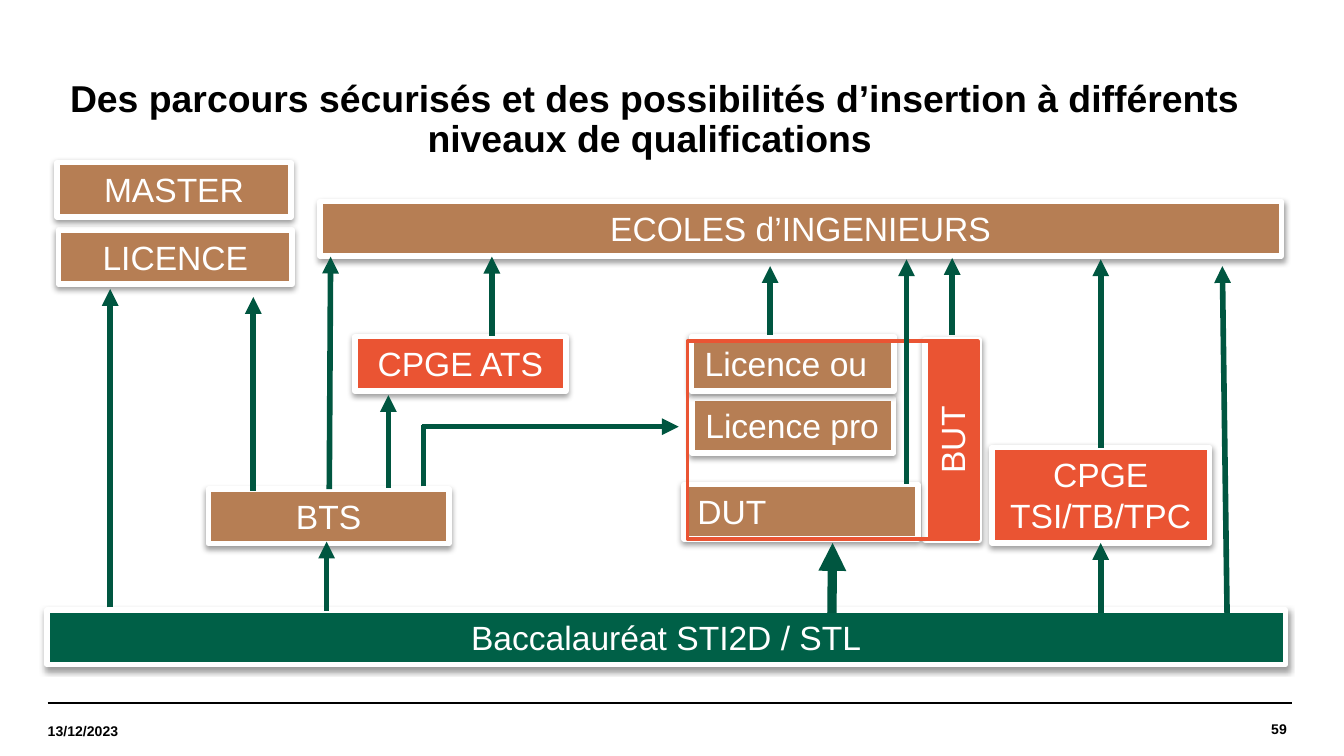
import pptx
import pptx.dml.color
import pptx.enum.shapes
import pptx.enum.text
import pptx.oxml
import pptx.oxml.ns
import pptx.util

PX = 4572
FONT = "Arial"
HUES = {
    "white": "FFFFFF",
    "black": "000000",
    "green": "006047",
    "arrow": "005640",
    "red": "EA5433",
    "brown": "B67E54",
}
ALIGN = pptx.enum.text.PP_ALIGN
ANCHOR = pptx.enum.text.MSO_ANCHOR
RECT = pptx.enum.shapes.MSO_SHAPE.RECTANGLE
STRAIGHT = pptx.enum.shapes.MSO_CONNECTOR.STRAIGHT


def hue(name):
    """Return a named colour."""
    return pptx.dml.color.RGBColor.from_string(HUES[name])


def emu(*sizes):
    """Turn px into EMU."""
    return [pptx.util.Emu(size * PX) for size in sizes]


def write(frame, text, size, color, align, bold=False):
    """Write one paragraph of one run and return it."""
    frame.word_wrap = True
    para = frame.paragraphs[0]
    para.alignment = align
    run = para.add_run()
    run.text = text
    font = run.font
    font.name, font.size, font.bold = FONT, pptx.util.Pt(size), bold
    font.color.rgb = hue(color)
    return para


def add_xml(parent, tag, **attrs):
    """Append a drawing element with its attributes."""
    child = pptx.oxml.parse_xml(f"<a:{tag} {pptx.oxml.ns.nsdecls('a')}/>")
    for key, value in attrs.items():
        child.set(key, value)
    parent.append(child)
    return child


def add_line(slide, ends, color, width, head=False):
    """Draw a straight line, with an arrowhead if asked."""
    line = slide.shapes.add_connector(STRAIGHT, *emu(*ends))
    line.line.color.rgb = hue(color)
    line.line.width = pptx.util.Pt(width)
    if head:
        add_xml(line.line._get_or_add_ln(), "tailEnd", type="triangle")
    add_xml(line._element.spPr, "effectLst")


def add_rect(slide, box, fill, edge, width):
    """Draw a flat rectangle, hollow when it has no fill."""
    rect = slide.shapes.add_shape(RECT, *emu(*box))
    rect.shadow.inherit = False
    if fill:
        rect.fill.solid()
        rect.fill.fore_color.rgb = hue(fill)
    else:
        rect.fill.background()
    rect.line.color.rgb = hue(edge)
    rect.line.width = pptx.util.Pt(width)
    return rect


def add_step(slide, box, text, fill, align=ALIGN.CENTER, turn=0):
    """Draw one study step as a labelled box with a soft shadow."""
    step = add_rect(slide, box, fill, "white", 3)
    effects = step._element.spPr.find(pptx.oxml.ns.qn("a:effectLst"))
    shade = add_xml(effects, "outerShdw", blurRad="40000", dist="20000",
                    dir="5400000", rotWithShape="0")
    tint = add_xml(shade, "srgbClr", val=HUES["black"])
    add_xml(tint, "alpha", val="38000")
    step.rotation = turn
    step.text_frame.vertical_anchor = ANCHOR.TOP
    write(step.text_frame, text, 18, "white", align)


def add_title(slide, box):
    """Place and format the title."""
    title = slide.shapes.title
    title.left, title.top, title.width, title.height = emu(*box)
    frame = title.text_frame
    frame.auto_size = pptx.enum.text.MSO_AUTO_SIZE.NONE
    frame.vertical_anchor = ANCHOR.MIDDLE
    text = ("Des parcours sécurisés et des possibilités d’insertion "
            "à différents niveaux de qualifications ")
    para = write(frame, text, 20, "black", ALIGN.CENTER, True)
    para.line_spacing = 0.9


def add_flow(slide, box):
    """Draw the study paths from the diploma up to the schools."""
    left, top, wide, high = box
    row = 81
    steps = [
        ((0, high - row, wide, row), "Baccalauréat STI2D / STL", "green"),
        ((1198, 372, 298, row), "BUT", "red", ALIGN.CENTER, 270),
        ((1406, 424, 324, 142), "CPGE TSI/TB/TPC", "red"),
        ((240, 486, 358, row), "BTS", "brown"),
        ((960, 351, 300, row), "Licence pro", "brown", ALIGN.LEFT),
        ((948, 479, 348, row), "DUT", "brown", ALIGN.LEFT),
        ((458, 259, 314, row), "CPGE ATS", "red"),
        ((17, 100, 348, row), "LICENCE", "brown"),
        ((15, 0, 348, row), "MASTER", "brown"),
        ((406, 58, 1431, row), "ECOLES d’INGENIEURS", "brown"),
        ((959, 259, 301, row), "Licence ou", "brown", ALIGN.LEFT),
    ]
    for (x, y, w, h), *look in steps:
        add_step(slide, (left + x, top + y, w, h), *look)

    add_rect(slide, (left + 953, top + 266, 432, 294), None, "red", 2)

    arrows = [
        (94, 662, 94, 188),
        (307, 488, 307, 200),
        (416, 667, 416, 564),
        (420, 486, 422, 140),
        (508, 484, 508, 346),
        (662, 258, 662, 140),
        (1076, 256, 1076, 154),
        (1168, 670, 1169, 566, 5),
        (1279, 478, 1279, 144),
        (1347, 256, 1347, 142),
        (1568, 670, 1568, 566),
        (1568, 424, 1568, 144),
        (1756, 670, 1749, 154),
        (558, 393, 940, 393),
        (560, 482, 560, 390, 3, False),
    ]
    for x1, y1, x2, y2, *look in arrows:
        width, head = look + [3, True][len(look):]
        ends = (left + x1, top + y1, left + x2, top + y2)
        add_line(slide, ends, "arrow", width, head)


def add_foot(slide, box):
    """Draw the rule, the date and the page number."""
    left, top, wide, high = box
    for x in (left, left + 8):
        add_line(slide, (x, top, x + wide, top), "black", 0.8)
    notes = [
        ((left, top + 4, 256, high - 2), "13/12/2023", ALIGN.LEFT),
        ((left + wide - 296, top, 296, high), "59", ALIGN.RIGHT),
    ]
    for place, text, align in notes:
        frame = slide.shapes.add_textbox(*emu(*place)).text_frame
        frame.margin_left = frame.margin_right = 0
        frame.margin_top = frame.margin_bottom = 0
        frame.vertical_anchor = ANCHOR.MIDDLE
        write(frame, text, 7.5, "black", align, True)


def main():
    """Build and save the slide."""
    deck = pptx.Presentation()
    deck.slide_width, deck.slide_height = emu(2000, 1125)
    slide = deck.slides.add_slide(deck.slide_layouts[5])
    add_foot(slide, (71, 1046, 1844, 78))
    add_flow(slide, (70, 242, 1843, 747))
    add_title(slide, (54, 46, 1842, 266))
    deck.save("out.pptx")


if __name__ == "__main__":
    main()
